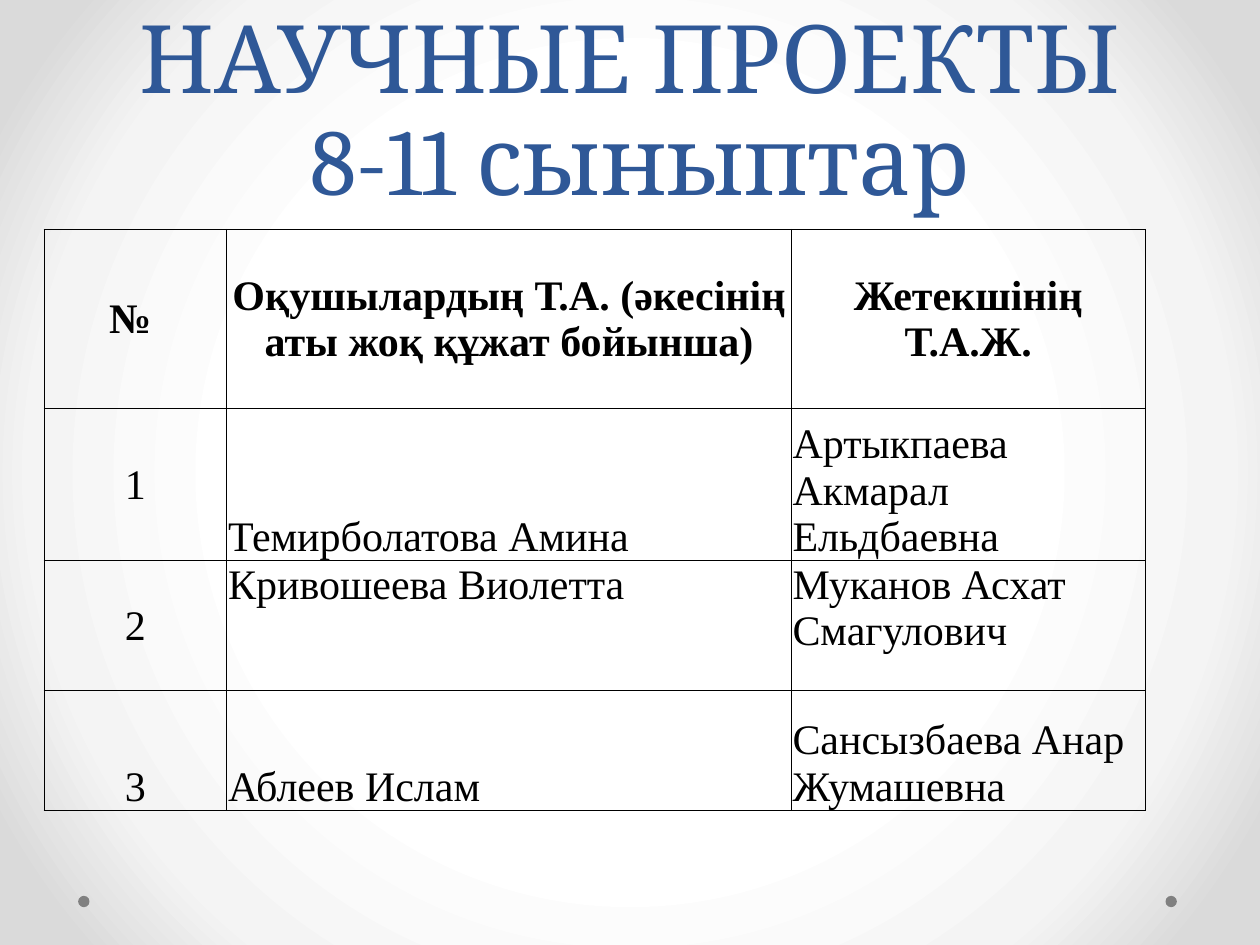
from lxml.etree import SubElement as Sub
from pptx import Presentation
from pptx.dml.color import RGBColor as RGB
from pptx.enum.shapes import MSO_SHAPE as Shape
from pptx.enum.text import MSO_ANCHOR as Anchor, PP_ALIGN as Align
from pptx.oxml.ns import qn
from pptx.util import Inches, Pt

TITLE = "НАУЧНЫЕ ПРОЕКТЫ\v 8-11 сыныптар"
HEAD = ["№ ", "Оқушылардың Т.А. (әкесінің аты жоқ құжат бойынша)", "Жетекшінің Т.А.Ж."]
ROWS = [
    ["1", "Темирболатова Амина", "Артыкпаева Акмарал Ельдбаевна"],
    ["2", "Кривошеева Виолетта", "Муканов Асхат Смагулович"],
    ["3", "Аблеев Ислам", "Сансызбаева Анар Жумашевна"],
]
MID, LOW, TOP = Anchor.MIDDLE, Anchor.BOTTOM, Anchor.TOP
ANCHORS = [[MID, MID, MID], [MID, LOW, LOW], [MID, TOP, TOP], [LOW, LOW, LOW]]
WIDTHS = [1.45, 4.48, 2.81]
HEIGHTS = [1.42, 0.97, 1.03, 0.95]
DOTS = [0.62, 9.25]

THEME = {
    "title": {"font": "Cambria", "size": 54, "color": "2F5897"},
    "body": {"font": "Times New Roman", "size": 24, "color": "000000"},
    "dot": "808080",
    "line": "000000",
    "glow": [(50, "FFFFFF"), (76, "F4F4F4"), (92, "DADADA")],
}


def write(frame, text, font, size, color, bold=False, align=Align.LEFT, lead=None):
    frame.word_wrap = True
    para = frame.paragraphs[0]
    para.text = text
    para.alignment = align
    if lead:
        para.line_spacing = Pt(lead)
    for run in para.runs:
        run.font.name = font
        run.font.size = Pt(size)
        run.font.bold = bold
        run.font.color.rgb = RGB.from_string(color)


def paint(slide):
    """Fill the background with a gradient that spreads from the centre."""
    fill = slide.background.fill
    fill.gradient()
    grad = slide.background._cSld.find(".//" + qn("a:gradFill"))
    for child in list(grad):
        grad.remove(child)
    stops = Sub(grad, qn("a:gsLst"))
    for pos, color in THEME["glow"]:
        stop = Sub(stops, qn("a:gs"), pos=str(pos * 1000))
        Sub(stop, qn("a:srgbClr"), val=color)
    focus = Sub(grad, qn("a:path"), path="circle")
    Sub(focus, qn("a:fillToRect"), l="50000", t="50000", r="50000", b="50000")


def frame_cell(cell):
    """Draw a thin line on all four sides of the cell."""
    props = cell._tc.get_or_add_tcPr()
    for side in "LRTB":
        line = Sub(props, qn("a:ln" + side), w=str(Pt(0.5)))
        Sub(Sub(line, qn("a:solidFill")), qn("a:srgbClr"), val=THEME["line"])


def add_dot(slide, left):
    dot = slide.shapes.add_shape(
        Shape.OVAL, Inches(left), Inches(7.11), Inches(0.09), Inches(0.09))
    dot.shadow.inherit = False
    dot.fill.solid()
    dot.fill.fore_color.rgb = RGB.from_string(THEME["dot"])
    dot.line.fill.background()


def add_title(slide):
    box = slide.shapes.add_textbox(Inches(0.5), 0, Inches(9), Inches(1.75))
    box.text_frame.vertical_anchor = LOW
    write(box.text_frame, TITLE, **THEME["title"], align=Align.CENTER, lead=58)


def add_grid(slide):
    data = [HEAD] + ROWS
    grid = slide.shapes.add_table(
        len(data), len(HEAD), Inches(0.35), Inches(1.82),
        Inches(sum(WIDTHS)), Inches(sum(HEIGHTS))).table
    grid.first_row = grid.horz_banding = False
    for col, width in zip(grid.columns, WIDTHS):
        col.width = Inches(width)
    for row, height in zip(grid.rows, HEIGHTS):
        row.height = Inches(height)
    for r, texts in enumerate(data):
        for c, text in enumerate(texts):
            cell = grid.cell(r, c)
            cell.margin_left = cell.margin_right = cell.margin_top = Inches(0.01)
            cell.margin_bottom = 0
            cell.vertical_anchor = ANCHORS[r][c]
            frame_cell(cell)
            cell.fill.background()
            mid = r == 0 or c == 0
            write(cell.text_frame, text, **THEME["body"], bold=r == 0,
                  align=Align.CENTER if mid else Align.LEFT)


def main():
    deck = Presentation()
    deck.slide_width, deck.slide_height = Inches(10), Inches(7.5)
    slide = deck.slides.add_slide(deck.slide_layouts[6])
    paint(slide)
    for left in DOTS:
        add_dot(slide, left)
    add_title(slide)
    add_grid(slide)
    deck.save("out.pptx")


if __name__ == "__main__":
    main()
